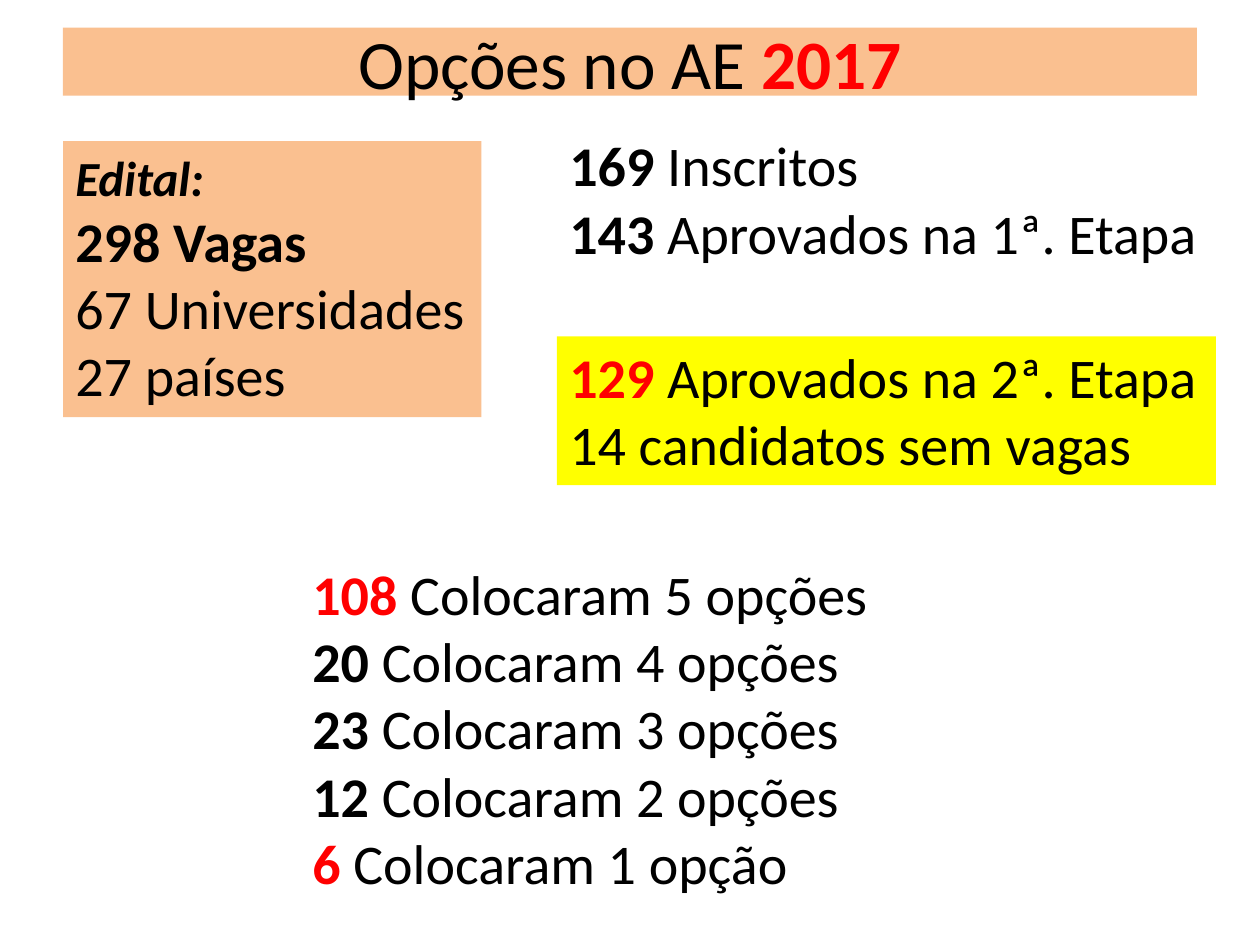
from dataclasses import dataclass

from pptx import Presentation
from pptx.dml.color import RGBColor
from pptx.enum.text import MSO_ANCHOR, MSO_AUTO_SIZE, PP_ALIGN
from pptx.util import Inches, Pt

CENTER, LEFT = PP_ALIGN.CENTER, PP_ALIGN.LEFT
MIDDLE, TOP = MSO_ANCHOR.MIDDLE, MSO_ANCHOR.TOP
GROW, FIXED = MSO_AUTO_SIZE.SHAPE_TO_FIT_TEXT, MSO_AUTO_SIZE.NONE


@dataclass(frozen=True)
class Theme:
    """Colours, font and type sizes of the slide."""
    font: str = "Calibri"
    ink: RGBColor = RGBColor(0, 0, 0)
    accent: RGBColor = RGBColor(255, 0, 0)
    peach: RGBColor = RGBColor(0xFA, 0xC0, 0x90)
    yellow: RGBColor = RGBColor(255, 255, 0)
    title: float = 39.6
    body: float = 32
    label: float = 28


THEME = Theme()


def add_run(paragraph, text, size=THEME.body, color=THEME.ink, bold=False, italic=False):
    """Append one formatted run to a paragraph."""
    run = paragraph.add_run()
    run.text = text
    font = run.font
    font.name, font.size = THEME.font, Pt(size)
    font.bold, font.italic = bold, italic
    font.color.rgb = color


def add_panel(slide, box, fill=None):
    """Place a text panel that grows with its unwrapped lines."""
    panel = slide.shapes.add_textbox(*map(Inches, box))
    if fill is not None:
        panel.fill.solid()
        panel.fill.fore_color.rgb = fill
    frame = panel.text_frame
    frame.word_wrap, frame.auto_size = False, GROW
    frame.vertical_anchor = TOP
    return frame


def add_lines(frame, lines):
    """Write one paragraph for each list of (text, format) runs."""
    for index, runs in enumerate(lines):
        paragraph = frame.add_paragraph() if index else frame.paragraphs[0]
        paragraph.alignment = LEFT
        for text, style in runs:
            add_run(paragraph, text, **style)


def count_line(count, label, color=THEME.ink):
    """Return the runs of a bold count followed by its label."""
    return [(count, {"bold": True, "color": color}), (f" {label}", {})]


def add_title(slide, box):
    """Place the title band."""
    frame = add_panel(slide, box, THEME.peach)
    frame.word_wrap, frame.auto_size = True, FIXED
    frame.vertical_anchor = MIDDLE
    heading = frame.paragraphs[0]
    heading.alignment = CENTER
    add_run(heading, "Opções no AE ", THEME.title)
    add_run(heading, "2017", THEME.title, THEME.accent, bold=True)


def add_call(slide, box):
    """Place the panel with the places offered in the call."""
    add_lines(add_panel(slide, box, THEME.peach), [
        [("Edital:", {"size": THEME.label, "bold": True, "italic": True})],
        [("298 Vagas", {"bold": True})],
        [("67 Universidades", {})],
        [("27 países", {})],
    ])


def add_first_stage(slide, box):
    """Place the applicants and the first-stage result."""
    add_lines(add_panel(slide, box), [
        count_line("169", "Inscritos"),
        count_line("143", "Aprovados na 1ª. Etapa"),
    ])


def add_second_stage(slide, box):
    """Place the highlighted second-stage result."""
    add_lines(add_panel(slide, box, THEME.yellow), [
        count_line("129", "Aprovados na 2ª. Etapa", THEME.accent),
        [("14 candidatos sem vagas", {})],
    ])


def add_choices(slide, box):
    """Place the number of candidates for each number of choices."""
    add_lines(add_panel(slide, box), [
        count_line("108", "Colocaram 5 opções", THEME.accent),
        count_line("20", "Colocaram 4 opções"),
        count_line("23", "Colocaram 3 opções"),
        count_line("12", "Colocaram 2 opções"),
        count_line("6", "Colocaram 1 opção", THEME.accent),
    ])


def main():
    """Build and save the slide."""
    deck = Presentation()
    deck.slide_width, deck.slide_height = Inches(10), Inches(7.5)
    slide = deck.slides.add_slide(deck.slide_layouts[6])
    add_title(slide, (0.5, 0.22, 9, 0.54))
    add_call(slide, (0.5, 1.12, 3.32, 2.19))
    add_first_stage(slide, (4.42, 0.99, 5.23, 1.18))
    add_choices(slide, (2.38, 4.39, 4.65, 2.79))
    add_second_stage(slide, (4.42, 2.67, 5.23, 1.18))
    deck.save("out.pptx")


if __name__ == "__main__":
    main()
